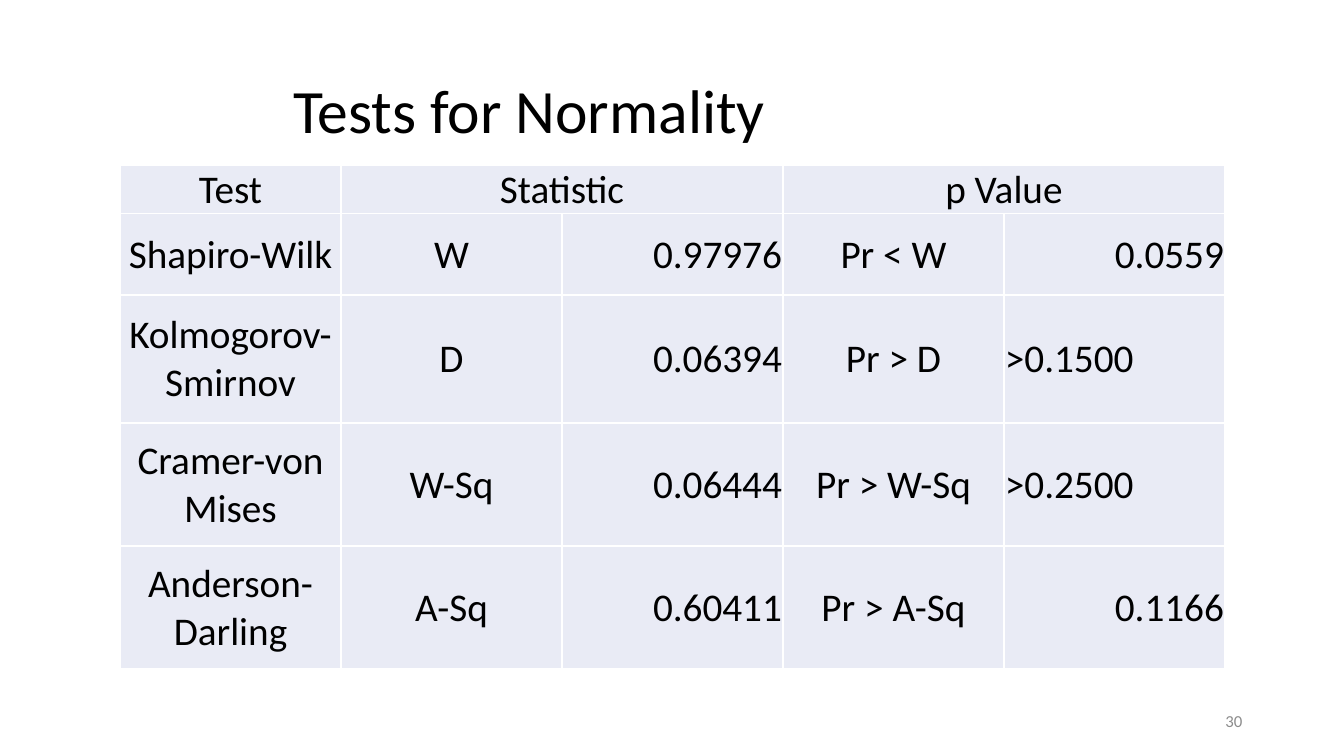
import pptx
import pptx.dml.color
import pptx.enum.text
import pptx.oxml
import pptx.oxml.ns
import pptx.util
from dataclasses import dataclass

Inches = pptx.util.Inches
Align = pptx.enum.text.PP_ALIGN
MIDDLE = pptx.enum.text.MSO_ANCHOR.MIDDLE


@dataclass(frozen=True)
class Theme:
    font: str = "Calibri"
    ink: str = "000000"
    muted: str = "8C8C8C"
    cell: str = "E9EBF5"
    rule: str = "FFFFFF"
    rule_width: float = 1
    title_size: float = 44
    table_size: float = 28
    number_size: float = 12


def apply(target, values):
    for key, value in values.items():
        setattr(target, key, value)


class SlideBuilder:
    def __init__(self, slide, theme):
        self.slide = slide
        self.theme = theme

    def style(self, paragraph, size, color, **layout):
        apply(paragraph, layout)
        apply(paragraph.font, {"name": self.theme.font, "size": pptx.util.Pt(size)})
        paragraph.font.color.rgb = pptx.dml.color.RGBColor.from_string(color)

    def text(self, box, content, size, color, **layout):
        frame = self.slide.shapes.add_textbox(*map(Inches, box)).text_frame
        apply(frame, {"word_wrap": True, "vertical_anchor": MIDDLE})
        frame.text = content
        self.style(frame.paragraphs[0], size, color, **layout)

    def borders(self, cell):
        properties = cell._tc.get_or_add_tcPr()
        for side in "LRTB":
            properties.append(pptx.oxml.parse_xml(
                f'<a:ln{side} {pptx.oxml.ns.nsdecls("a")} w="{pptx.util.Pt(self.theme.rule_width)}">'
                f'<a:solidFill><a:srgbClr val="{self.theme.rule}"/></a:solidFill></a:ln{side}>'))

    def cell(self, cell, content, alignment):
        apply(cell, {
            "text": content,
            "vertical_anchor": MIDDLE,
            "margin_left": Inches(0.01),
            "margin_right": Inches(0.01),
            "margin_top": Inches(0.01),
            "margin_bottom": 0,
        })
        self.style(cell.text_frame.paragraphs[0], self.theme.table_size,
                   self.theme.ink, alignment=alignment)
        self.borders(cell)
        cell.fill.solid()
        cell.fill.fore_color.rgb = pptx.dml.color.RGBColor.from_string(self.theme.cell)

    def table(self, box, rows, heights, header_spans):
        columns = len(rows[0])
        table = self.slide.shapes.add_table(len(rows), columns, *map(Inches, box)).table
        apply(table, {"first_row": False, "horz_banding": False})
        for column in table.columns:
            column.width = Inches(box[2] / columns)
        for row, height in zip(table.rows, heights):
            row.height = Inches(height)
        for r, row in enumerate(rows):
            for c, content in enumerate(row):
                if content.startswith(">"):
                    alignment = Align.LEFT
                elif content.startswith("0."):
                    alignment = Align.RIGHT
                else:
                    alignment = Align.CENTER
                self.cell(table.cell(r, c), content, alignment)
        for first, last in header_spans:
            table.cell(0, first).merge(table.cell(0, last))


def main():
    presentation = pptx.Presentation()
    apply(presentation, {"slide_width": Inches(13.33), "slide_height": Inches(7.5)})
    theme = Theme()
    builder = SlideBuilder(
        presentation.slides.add_slide(presentation.slide_layouts[6]), theme)

    builder.text((2.81, 0.4, 9.6, 1.45), "Tests for Normality",
                 theme.title_size, theme.ink, line_spacing=0.9)
    builder.text((9.42, 6.95, 3, 0.4), "30",
                 theme.number_size, theme.muted, alignment=Align.RIGHT)

    normality_tests = [
        ("Test", "Statistic", "", "p Value", ""),
        ("Shapiro-Wilk", "W", "0.97976", "Pr < W", "0.0559"),
        ("Kolmogorov-Smirnov", "D", "0.06394", "Pr > D", ">0.1500"),
        ("Cramer-von Mises", "W-Sq", "0.06444", "Pr > W-Sq", ">0.2500"),
        ("Anderson-Darling", "A-Sq", "0.60411", "Pr > A-Sq", "0.1166"),
    ]
    builder.table((1.19, 1.64, 10.96, 4.99), normality_tests,
                  heights=(0.41, 0.81, 1.27, 1.22, 1.22),
                  header_spans=((1, 2), (3, 4)))
    presentation.save("out.pptx")


if __name__ == "__main__":
    main()
